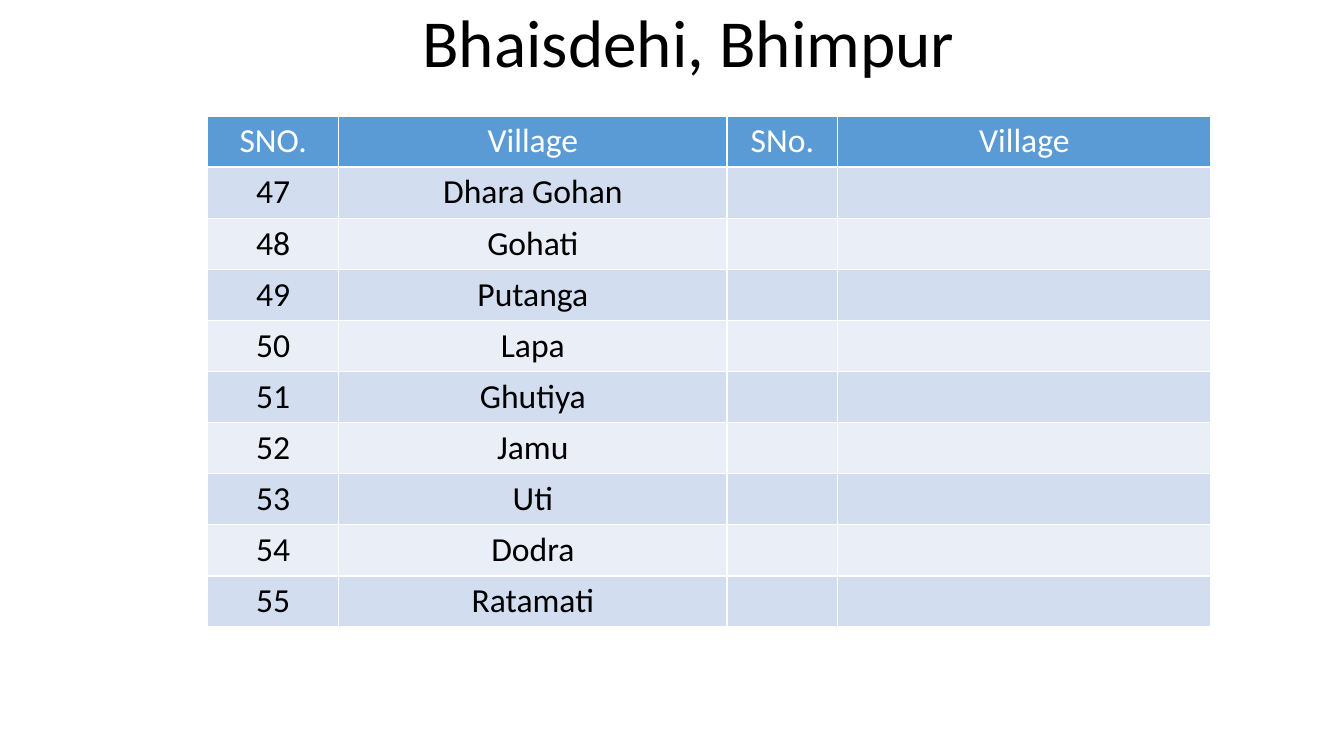
from lxml import etree
from pptx import Presentation
from pptx import util as u
from pptx.dml.color import RGBColor
from pptx.enum import text
from pptx.oxml import ns

WHITE = RGBColor(0xFF, 0xFF, 0xFF)
BLACK = RGBColor(0x00, 0x00, 0x00)
HEADER = RGBColor(0x5B, 0x9B, 0xD5)
BANDS = (RGBColor(0xD2, 0xDE, 0xEF), RGBColor(0xEA, 0xEF, 0xF7))

HEADINGS = ("SNO.", "Village", "SNo.", "Village")
FIRST_NUMBER = 47
VILLAGES = ("Dhara Gohan", "Gohati", "Putanga", "Lapa", "Ghutiya",
            "Jamu", "Uti", "Dodra", "Ratamati")
COLUMN_WIDTHS = (1.3, 3.85, 1.1, 3.7)
ROW_HEIGHT = 0.48


class SlideBuilder:
    """Holds the text style and the current slide."""

    def __init__(self, slide, font="Calibri"):
        self.slide = slide
        self.font = font

    def add_text(self, tf, wording, size, color):
        p = tf.paragraphs[0]
        p.alignment = text.PP_ALIGN.CENTER
        r = p.add_run()
        r.text = wording
        r.font.name = self.font
        r.font.size = u.Pt(size)
        r.font.bold = False
        r.font.color.rgb = color
        return p

    def title(self, wording, left, top, width, height):
        sp = self.slide.shapes.add_textbox(
            u.Inches(left), u.Inches(top), u.Inches(width), u.Inches(height))
        tf = sp.text_frame
        tf.word_wrap = True
        tf.vertical_anchor = text.MSO_ANCHOR.BOTTOM
        self.add_text(tf, wording, 48, BLACK).line_spacing = 0.9

    def borders(self, cell, color, width):
        tc_pr = cell._tc.get_or_add_tcPr()
        for i, side in enumerate(("a:lnL", "a:lnR", "a:lnT", "a:lnB")):
            ln = etree.Element(ns.qn(side), w=str(u.Pt(width)))
            fill = etree.SubElement(ln, ns.qn("a:solidFill"))
            etree.SubElement(fill, ns.qn("a:srgbClr"), val=str(color))
            tc_pr.insert(i, ln)

    def table(self, rows, left, top, widths, row_height):
        sp = self.slide.shapes.add_table(
            len(rows), len(widths), u.Inches(left), u.Inches(top),
            u.Inches(sum(widths)), u.Inches(row_height * len(rows)))
        table = sp.table
        table.horz_banding = False
        for column, width in zip(table.columns, widths):
            column.width = u.Inches(width)
        for i, row in enumerate(rows):
            table.rows[i].height = u.Inches(row_height)
            for j, wording in enumerate(row):
                cell = table.cell(i, j)
                cell.fill.solid()
                cell.fill.fore_color.rgb = BANDS[(i - 1) % 2] if i else HEADER
                self.borders(cell, WHITE, 1)
                if wording:
                    self.add_text(cell.text_frame, wording, 24,
                                  BLACK if i else WHITE)


def main():
    prs = Presentation()
    prs.slide_width = u.Inches(13.33)
    prs.slide_height = u.Inches(7.5)
    builder = SlideBuilder(prs.slides.add_slide(prs.slide_layouts[6]))

    # Village list, right-hand pair of columns left empty
    rows = [HEADINGS]
    for number, village in enumerate(VILLAGES, FIRST_NUMBER):
        rows.append((str(number), village, "", ""))
    builder.table(rows, 2.06, 1.15, COLUMN_WIDTHS, ROW_HEIGHT)

    # Title
    builder.title("Bhaisdehi, Bhimpur", 2.58, 0, 8.5, 0.86)

    prs.save("out.pptx")


if __name__ == "__main__":
    main()
